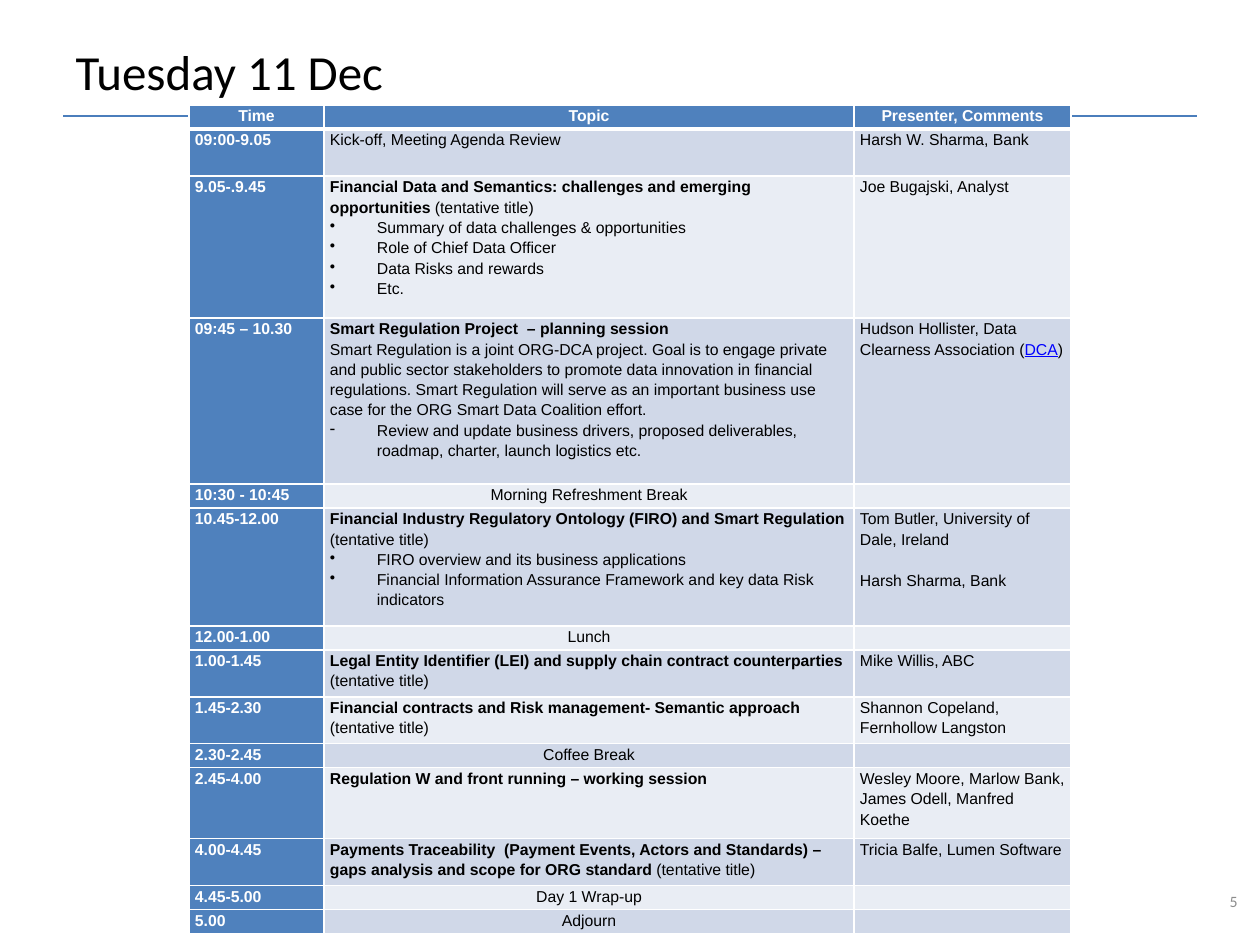
from lxml.etree import SubElement
from pptx import Presentation
from pptx.dml.color import RGBColor
from pptx.enum.shapes import MSO_CONNECTOR as CONN
from pptx.enum.text import MSO_ANCHOR as ANCHOR, PP_ALIGN as ALIGN
from pptx.oxml.ns import qn
from pptx.util import Emu, Pt

SCALE = 914400 / 126
BLUE, BLACK, WHITE, LINK = "4F81BD", "000000", "FFFFFF", "0000FF"
BANDS = ["D0D8E8", "E9EDF4"]
BULLETS = ("• ", "- ")
COLUMNS = [135, 530, 217]
HEADER = ["Time", "Topic", "Presenter, Comments"]
AGENDA = [
    (47, "09:00-9.05", ["Kick-off, Meeting Agenda Review"], ["Harsh W. Sharma, Bank"]),
    (142, "9.05-.9.45",
     ["*Financial Data and Semantics: challenges and emerging opportunities *(tentative title)",
      "• Summary of data challenges & opportunities",
      "• Role of Chief Data Officer",
      "• Data Risks and rewards",
      "• Etc."],
     ["Joe Bugajski, Analyst"]),
    (166, "09:45 – 10.30",
     ["*Smart Regulation Project  – planning session*",
      "Smart Regulation is a joint ORG-DCA project. Goal is to engage private and public "
      "sector stakeholders to promote data innovation in financial regulations. Smart "
      "Regulation will serve as an important business use case for the ORG Smart Data "
      "Coalition effort.",
      "- Review and update business drivers, proposed deliverables, roadmap, charter, "
      "launch logistics etc."],
     ["Hudson Hollister, Data Clearness Association (*DCA*)"]),
    (24, "10:30 - 10:45", ["Morning Refreshment Break"], []),
    (118, "10.45-12.00",
     ["*Financial Industry Regulatory Ontology (FIRO) and Smart Regulation* (tentative title)",
      "• FIRO overview and its business applications",
      "• Financial Information Assurance Framework and key data Risk indicators"],
     ["Tom Butler, University of Dale, Ireland", "Harsh Sharma, Bank"]),
    (24, "12.00-1.00", ["Lunch"], []),
    (47, "1.00-1.45",
     ["*Legal Entity Identifier (LEI) and supply chain contract counterparties *(tentative title)"],
     ["Mike Willis, ABC"]),
    (47, "1.45-2.30",
     ["*Financial contracts and Risk management- Semantic approach* (tentative title)"],
     ["Shannon Copeland, Fernhollow Langston"]),
    (24, "2.30-2.45", ["Coffee Break"], []),
    (71, "2.45-4.00", ["*Regulation W and front running – working session*"],
     ["Wesley Moore, Marlow Bank, James Odell, Manfred Koethe"]),
    (47, "4.00-4.45",
     ["*Payments Traceability  (Payment Events, Actors and Standards) –gaps analysis and "
      "scope for ORG standard *(tentative title)"],
     ["Tricia Balfe, Lumen Software"]),
    (24, "4.45-5.00", ["Day 1 Wrap-up"], []),
    (24, "5.00", ["Adjourn"], []),
]


def px(n):
    return Emu(round(n * SCALE))


def rgb(value):
    return RGBColor.from_string(value)


class Deck:
    """Holds the style and the current slide, and adds elements to it."""

    def __init__(self):
        self.prs = Presentation()
        self.prs.slide_width, self.prs.slide_height = px(1260), px(945)
        self.s = self.prs.slides.add_slide(self.prs.slide_layouts[5])

    def font(self, r, size, color, name="Arial", bold=False):
        f = r.font
        f.size, f.name, f.bold = Pt(size), name, bold
        f.color.rgb = rgb(color)

    def place(self, sp, x, y, w, h):
        sp.left, sp.top, sp.width, sp.height = px(x), px(y), px(w), px(h)

    def label(self, sp, text, size, color, align):
        tf = sp.text_frame
        tf.text, tf.word_wrap, tf.vertical_anchor = text, True, ANCHOR.MIDDLE
        p = tf.paragraphs[0]
        p.alignment = align
        self.font(p.runs[0], size, color, "Calibri")

    def title(self, text, *box):
        sp = self.s.shapes.title
        self.place(sp, *box)
        self.label(sp, text, 28, BLACK, ALIGN.LEFT)

    def number(self, text, *box):
        sp = self.s.shapes.add_textbox(*map(px, box))
        self.label(sp, text, 9, "8C8C8C", ALIGN.RIGHT)

    def rule(self, x1, y1, x2, y2):
        sp = self.s.shapes.add_connector(CONN.STRAIGHT, px(x1), px(y1), px(x2), px(y2))
        sp.line.color.rgb, sp.line.width = rgb("4B7EBC"), Pt(0.75)
        SubElement(sp._element.spPr, qn("a:effectLst"))

    def table(self, x, y, widths, heights):
        size = px(sum(widths)), px(sum(heights))
        t = self.s.shapes.add_table(len(heights), len(widths), px(x), px(y), *size).table
        for col, w in zip(t.columns, widths):
            col.width = px(w)
        for row, h in zip(t.rows, heights):
            row.height = px(h)
        return t

    def borders(self, cell, top, bottom):
        for side, width in (("L", 1), ("R", 1), ("T", top), ("B", bottom)):
            ln = SubElement(cell._tc.get_or_add_tcPr(), qn("a:ln" + side), w=str(Pt(width)))
            fill = SubElement(ln, qn("a:solidFill"))
            SubElement(fill, qn("a:srgbClr"), val=WHITE)

    def cell(self, cell, lines, fill, color=BLACK, align=ALIGN.LEFT, top=1, bottom=1,
             link=False, gap=0):
        self.borders(cell, top, bottom)
        cell.fill.solid()
        cell.fill.fore_color.rgb = rgb(fill)
        cell.margin_left = cell.margin_right = px(6)
        cell.margin_top = cell.margin_bottom = 0
        tf = cell.text_frame
        for i, line in enumerate(lines or [""]):
            p = tf.add_paragraph() if i else tf.paragraphs[0]
            p.alignment, p.line_spacing = align, 1.15
            if i and gap:
                p.space_before = Pt(gap)
            if line.startswith(BULLETS):
                self.bullet(p, line[0])
                line = line[2:]
            self.runs(p, line, color, link)

    def bullet(self, p, char):
        pPr = p._p.get_or_add_pPr()
        pPr.set("marL", str(px(47)))
        pPr.set("indent", str(-px(47)))
        SubElement(pPr, qn("a:buChar"), char=char)

    def runs(self, p, line, color, link):
        for i, text in enumerate(line.split("*")):
            if text:
                r = p.add_run()
                r.text = text
                marked = i % 2 == 1
                linked = marked and link
                self.font(r, 9, LINK if linked else color, bold=marked and not link)
                if linked:
                    r.font.underline = True
        if not line:
            SubElement(p._p, qn("a:endParaRPr"), sz="900")


def main():
    d = Deck()
    d.title("Tuesday 11 Dec", 63, 32, 1134, 78)
    d.rule(63, 116, 1197, 116)
    t = d.table(189, 105, COLUMNS, [24] + [row[0] for row in AGENDA])
    for col, text in enumerate(HEADER):
        d.cell(t.cell(0, col), [f"*{text}*"], BLUE, WHITE, ALIGN.CENTER, bottom=3)
    for i, (_, time, topic, presenter) in enumerate(AGENDA):
        top = 1 if i else 3
        band = BANDS[i % 2]
        align = ALIGN.LEFT if presenter else ALIGN.CENTER
        d.cell(t.cell(i + 1, 0), [f"*{time}*"], BLUE, WHITE, top=top)
        d.cell(t.cell(i + 1, 1), topic, band, align=align, top=top)
        d.cell(t.cell(i + 1, 2), presenter, band, top=top, link=True, gap=12)
    d.number("5", 1197, 876, 53, 50)
    d.prs.save("out.pptx")


if __name__ == "__main__":
    main()
